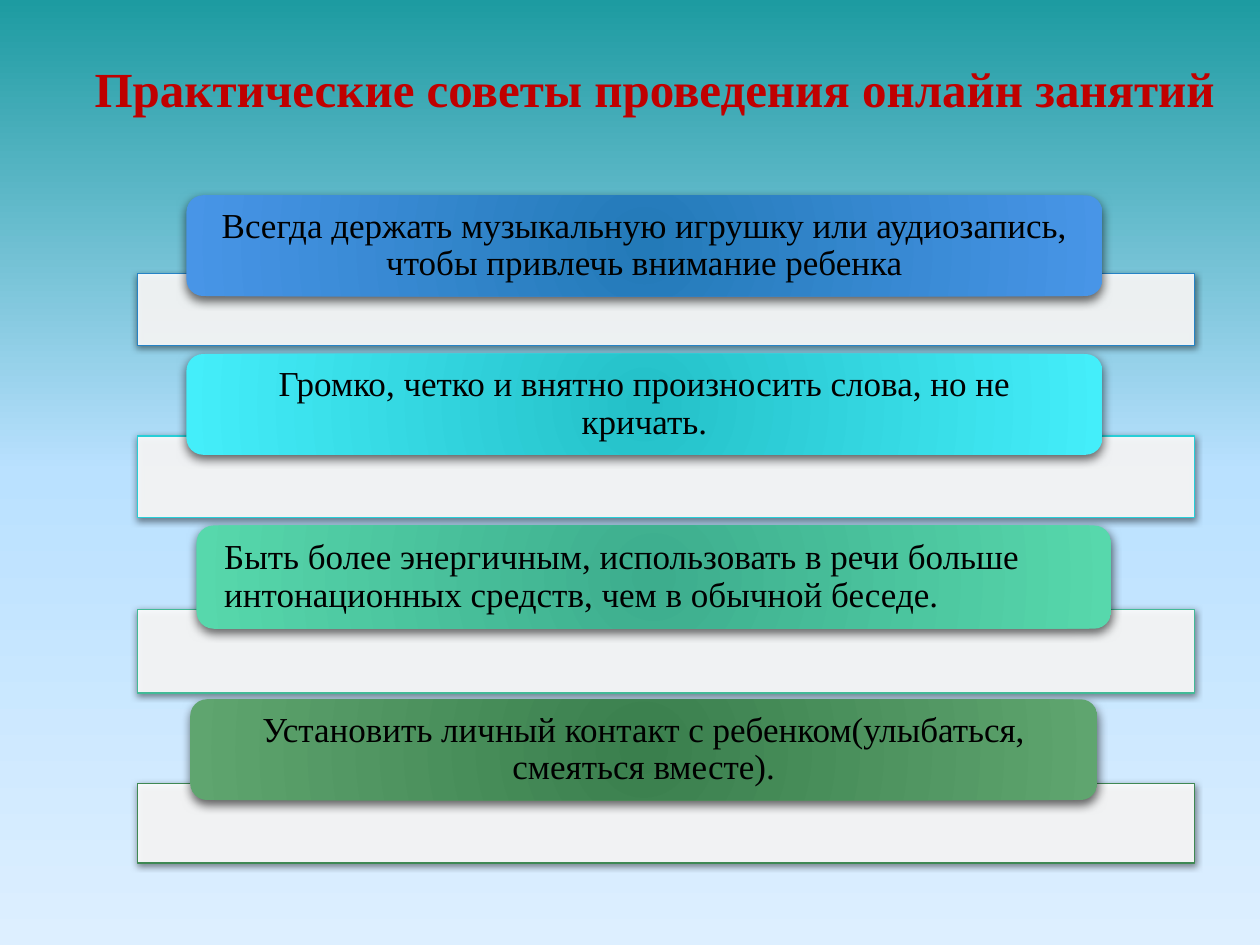
import pptx
import pptx.util
import pptx.dml.color
import pptx.enum.shapes
import pptx.enum.text
import pptx.oxml
import pptx.oxml.ns

Inches = pptx.util.Inches
Pt = pptx.util.Pt
qn = pptx.oxml.ns.qn
Kind = pptx.enum.shapes.MSO_SHAPE
Align = pptx.enum.text.PP_ALIGN
Anchor = pptx.enum.text.MSO_ANCHOR
NS = pptx.oxml.ns.nsdecls("a")


def color(code):
    return pptx.dml.color.RGBColor.from_string(code)


def apply(target, values):
    for name, value in values.items():
        setattr(target, name, value)


def blend(fill, root, stops, shade):
    """Give the fill, found in root, any number of stops and a direction."""
    fill.gradient()
    grad = next(root.iter(qn("a:gradFill")))
    for child in list(grad):
        grad.remove(child)
    marks = "".join(
        f'<a:gs pos="{pos * 1000}"><a:srgbClr val="{code}"/></a:gs>'
        for pos, code in stops)
    grad.append(pptx.oxml.parse_xml(f"<a:gsLst {NS}>{marks}</a:gsLst>"))
    grad.append(pptx.oxml.parse_xml(shade))


class Deck:
    FONT = "Times New Roman"
    DOWN = f'<a:lin {NS} ang="5400000" scaled="0"/>'
    ROUND = (f'<a:path {NS} path="circle"><a:fillToRect l="100000" '
             't="100000" r="100000" b="100000"/></a:path>')

    def __init__(self):
        self.prs = pptx.Presentation()
        apply(self.prs, {"slide_width": Inches(10), "slide_height": Inches(7.5)})
        self.slide = self.prs.slides.add_slide(self.prs.slide_layouts[6])

    def back(self, stops):
        fill = self.slide.background.fill
        blend(fill, self.slide._element, stops, self.DOWN)

    def shape(self, kind, box):
        shape = self.slide.shapes.add_shape(kind, *map(Inches, box))
        shape.shadow.inherit = False
        shape.fill.background()
        shape.line.fill.background()
        return shape

    def shade(self, shape, alpha, blur, dist):
        """Add a shadow that falls straight down."""
        effects = shape._element.spPr.find(qn("a:effectLst"))
        effects.append(pptx.oxml.parse_xml(
            f'<a:outerShdw {NS} blurRad="{Pt(blur)}" dist="{Pt(dist)}" '
            'dir="5400000" algn="ctr" rotWithShape="0"><a:srgbClr val="000000">'
            f'<a:alpha val="{alpha * 1000}"/></a:srgbClr></a:outerShdw>'))

    def text(self, shape, words, size, code, bold=False, align=Align.CENTER):
        frame = shape.text_frame
        apply(frame, {"word_wrap": True, "vertical_anchor": Anchor.MIDDLE})
        para = frame.paragraphs[0]
        para.alignment = align
        run = para.add_run()
        run.text = words
        apply(run.font, {"name": self.FONT, "size": Pt(size), "bold": bold})
        run.font.color.rgb = color(code)
        return frame

    def title(self, box, words):
        self.text(self.shape(Kind.ROUNDED_RECTANGLE, box), words, 28, "C00000", True)

    def strip(self, box, edge):
        strip = self.shape(Kind.RECTANGLE, box)
        strip.fill.solid()
        strip.fill.fore_color.rgb = color("FFFFFF")
        tone = next(strip._element.spPr.iter(qn("a:srgbClr")))
        tone.append(pptx.oxml.parse_xml(f'<a:alpha {NS} val="90000"/>'))
        strip.line.color.rgb = color(edge)
        strip.line.width = Pt(0.75)
        self.shade(strip, 50, 4, 1)

    def label(self, box, inner, outer, words, align):
        label = self.shape(Kind.ROUNDED_RECTANGLE, box)
        blend(label.fill, label._element, [(0, inner), (100, outer)], self.ROUND)
        self.shade(label, 60, 6, 2)
        frame = self.text(label, words, 20, "000000", align=align)
        apply(frame, {"margin_left": Inches(0.18), "margin_right": Inches(0.18),
                      "margin_top": 0, "margin_bottom": 0})
        frame.paragraphs[0].line_spacing = 0.9


# strip top and height, label box, edge, inner and outer colours, words, alignment
TIPS = [
    (2.17, 0.57, (1.48, 1.55, 7.27, 0.8), "2683C6", "237AB8", "4895E7",
     "Всегда держать музыкальную игрушку или аудиозапись, "
     "чтобы привлечь внимание ребенка", Align.CENTER),
    (3.46, 0.65, (1.48, 2.81, 7.27, 0.8), "27CED7", "24C0C8", "44EEFA",
     "Громко, четко и внятно произносить слова, но не кричать.", Align.CENTER),
    (4.84, 0.66, (1.56, 4.17, 7.26, 0.82), "42BA97", "3DAD8D", "57D8AC",
     "Быть более энергичным, использовать в речи больше "
     "интонационных средств, чем в обычной беседе.", Align.LEFT),
    (6.22, 0.63, (1.51, 5.55, 7.2, 0.8), "3E8853", "3A7F4D", "5FA56F",
     "Установить личный контакт с ребенком(улыбаться, смеяться вместе).",
     Align.CENTER),
]


def main():
    deck = Deck()
    deck.back([(0, "1D9BA1"), (50, "BAE1FF"), (100, "DDEFFF")])
    deck.title((0.39, 0.31, 9.61, 0.78),
               "Практические советы проведения онлайн занятий")
    for top, height, box, edge, inner, outer, words, align in TIPS:
        deck.strip((1.09, top, 8.39, height), edge)
        deck.label(box, inner, outer, words, align)
    deck.prs.save("out.pptx")


if __name__ == "__main__":
    main()
